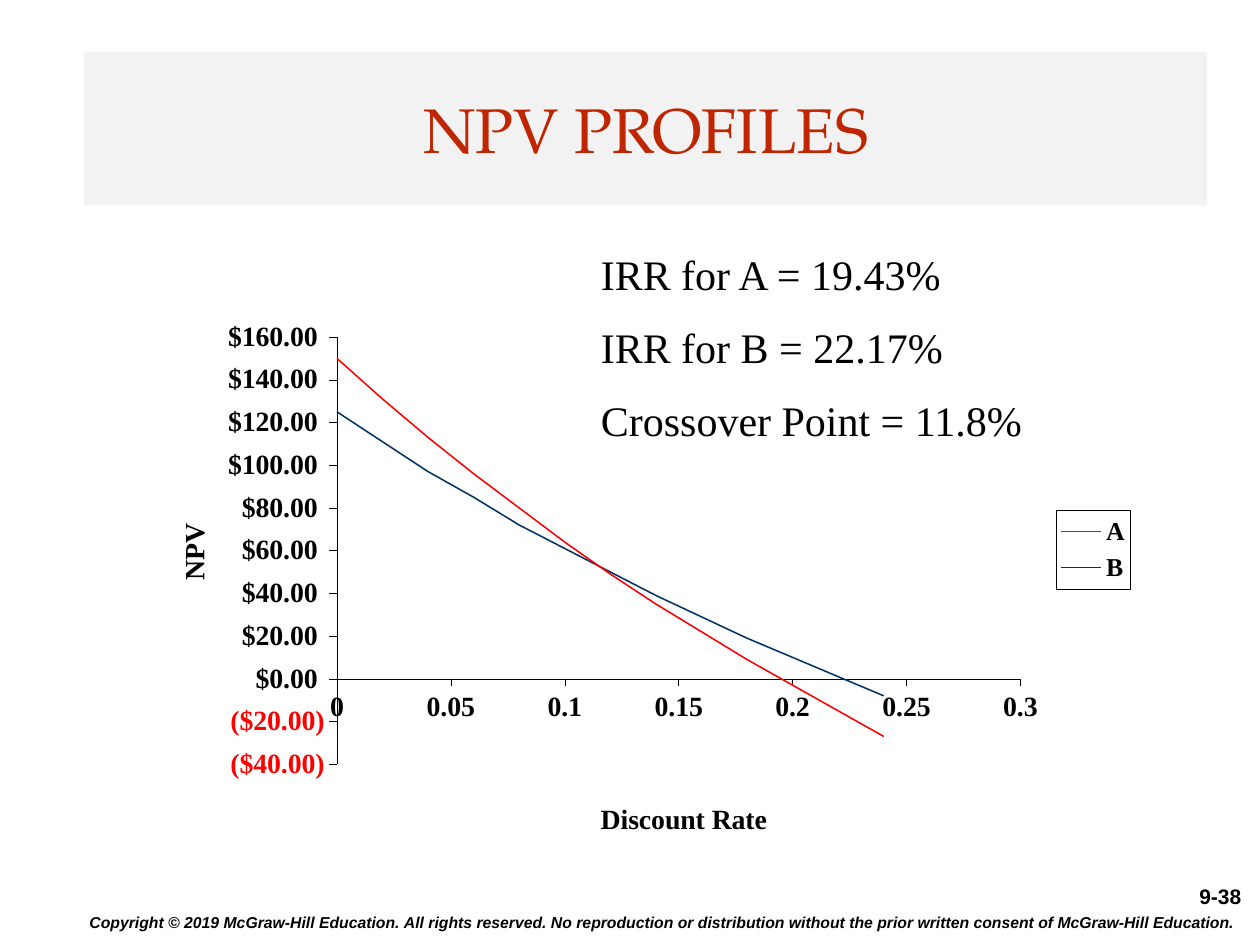
from dataclasses import dataclass

from lxml import etree
from pptx import Presentation
from pptx import util as u
from pptx.chart import data as cd
from pptx.dml.color import RGBColor
from pptx.enum import chart as ch, text
from pptx.oxml import ns


@dataclass(frozen=True)
class Theme:
    """Hold the colours, fonts and type sizes of the slide."""
    black: str = "000000"
    title: str = "BF2600"
    band: str = "F2F2F2"
    line_a: str = "FF0000"
    line_b: str = "003366"
    head: str = "TeX Gyre Pagella"
    body: str = "Times New Roman"
    foot: str = "Arial"
    title_pt: float = 36
    body_pt: float = 24
    axis_pt: float = 15.9
    legend_pt: float = 14.7
    page_pt: float = 12
    copyright_pt: float = 9
    axis_line_pt: float = 0.22
    series_line_pt: float = 0.89


T = Theme()
RATES = [i / 50 for i in range(13)]
PROFILES = {
    "A": (T.line_a, [150, 131, 113, 96, 80, 64, 49, 35, 22, 9, -3, -15, -27]),
    "B": (T.line_b, [125, 111, 97, 85, 72, 61, 50, 39, 29, 19, 10, 1, -8]),
}
FINDINGS = ["IRR for A = 19.43%", "IRR for B = 22.17%", "Crossover Point = 11.8%"]
COPYRIGHT = ("Copyright © 2019 McGraw-Hill Education.\u00a0All rights reserved. "
             "No reproduction or distribution without the prior written consent "
             "of McGraw-Hill Education.")


def apply(obj, **values):
    """Set each given attribute on an object."""
    for name, value in values.items():
        setattr(obj, name, value)


def set_font(font, name, size, color=T.black, bold=False, italic=False):
    """Format a font."""
    apply(font, name=name, size=u.Pt(size), bold=bold, italic=italic)
    font.color.rgb = RGBColor.from_string(color)


def set_line(line, color, width):
    """Format a line."""
    line.color.rgb = RGBColor.from_string(color)
    line.width = u.Pt(width)


def box(*at):
    """Turn left, top, width and height in inches into placement values."""
    return dict(zip(("left", "top", "width", "height"), map(u.Inches, at)))


def fill_text(sp, lines, font, align, anchor=text.MSO_ANCHOR.TOP, gap=0):
    """Write lines as paragraphs with a gap between them."""
    tf = sp.text_frame
    apply(tf, word_wrap=True, vertical_anchor=anchor)
    for i, line in enumerate(lines):
        p = tf.add_paragraph() if i else tf.paragraphs[0]
        apply(p, alignment=align, space_before=u.Pt(gap if i else 0))
        r = p.add_run()
        r.text = line
        set_font(r.font, **font)
    return tf


def add_title(s, title):
    """Place the title on its shaded band."""
    sp = s.shapes.title
    apply(sp, **box(0.67, 0.41, 8.91, 1.22))
    sp.fill.solid()
    sp.fill.fore_color.rgb = RGBColor.from_string(T.band)
    fill_text(sp, [title], dict(name=T.head, size=T.title_pt, color=T.title),
              text.PP_ALIGN.CENTER, text.MSO_ANCHOR.MIDDLE)


def add_text(s, at, lines, font, **layout):
    """Add a text box."""
    return fill_text(s.shapes.add_textbox(**box(*at)), lines, font, **layout)


def place(element, inner=False, **fractions):
    """Give a chart part a manual layout in fractions of the chart."""
    for old in element.findall(ns.qn("c:layout")):
        element.remove(old)
    layout = etree.Element(ns.qn("c:layout"))
    manual = etree.SubElement(layout, ns.qn("c:manualLayout"))
    values = {"layoutTarget": "inner"} if inner else {}
    values.update({f"{k}Mode": "edge" for k in ("x", "y")}, **fractions)
    for name, value in values.items():
        etree.SubElement(manual, ns.qn(f"c:{name}")).set("val", str(value))
    before = [c for c in element
              if c.tag in (ns.qn("c:tx"), ns.qn("c:legendPos"))]
    element.insert(len(before), layout)


def format_axis(axis, title, low, high, step, x, y):
    """Format an axis, its scale and its title."""
    apply(axis, minimum_scale=low, maximum_scale=high, major_unit=step,
          has_major_gridlines=False, major_tick_mark=ch.XL_TICK_MARK.OUTSIDE,
          minor_tick_mark=ch.XL_TICK_MARK.NONE)
    set_line(axis.format.line, T.black, T.axis_line_pt)
    set_font(axis.tick_labels.font, T.body, T.axis_pt, bold=True)
    p = axis.axis_title.text_frame.paragraphs[0]
    r = p.add_run()
    r.text = title
    set_font(r.font, T.body, T.axis_pt, bold=True)
    place(axis.axis_title._element, x=x, y=y)


def add_profiles(s):
    """Add the scatter chart of both NPV profiles."""
    data = cd.XyChartData()
    for name, (_, values) in PROFILES.items():
        series = data.add_series(name)
        for rate, value in zip(RATES, values):
            series.add_data_point(rate, value)
    chart = s.shapes.add_chart(ch.XL_CHART_TYPE.XY_SCATTER_SMOOTH_NO_MARKERS,
                               *box(1.2, 2.39, 7.84, 4.32).values(), data).chart
    apply(chart, has_title=False, has_legend=True)
    set_font(chart.font, T.body, T.axis_pt, bold=True)
    plot = chart.plots[0]
    plot.vary_by_categories = False
    for series, (color, _) in zip(plot.series, PROFILES.values()):
        series.smooth = True
        series.marker.style = ch.XL_MARKER_STYLE.NONE
        set_line(series.format.line, color, T.series_line_pt)
    format_axis(chart.category_axis, "Discount Rate", 0, 0.3, 0.05, 0.45, 0.91)
    format_axis(chart.value_axis, "NPV", -40, 160, 20, 0.02, 0.4)
    apply(chart.category_axis.tick_labels, number_format="General",
          number_format_is_linked=False)
    apply(chart.value_axis.tick_labels, number_format_is_linked=False,
          number_format='"$"#,##0.00_);[Red]\\("$"#,##0.00\\)')
    place(plot._element.getparent(), inner=True, x=0.188, y=0.066, w=0.692, h=0.785)
    legend = chart.legend
    apply(legend, position=ch.XL_LEGEND_POSITION.RIGHT, include_in_layout=False)
    set_font(legend.font, T.body, T.legend_pt, bold=True)
    place(legend._element, x=0.916, y=0.384, w=0.095 - 0.02, h=0.145)
    border = etree.Element(ns.qn("c:spPr"))
    line = etree.SubElement(border, ns.qn("a:ln"), w=str(u.Pt(T.axis_line_pt)))
    fill = etree.SubElement(line, ns.qn("a:solidFill"))
    etree.SubElement(fill, ns.qn("a:srgbClr"), val=T.black)
    legend._element.find(ns.qn("c:txPr")).addprevious(border)


def main():
    """Build and save the slide."""
    prs = Presentation()
    apply(prs, slide_width=u.Inches(10), slide_height=u.Inches(7.5))
    s = prs.slides.add_slide(prs.slide_layouts[5])
    add_profiles(s)
    add_title(s, "NPV PROFILES")
    add_text(s, (4.67, 1.92, 3.75, 1.72), FINDINGS,
             dict(name=T.body, size=T.body_pt), align=text.PP_ALIGN.LEFT, gap=13)
    add_text(s, (8.91, 6.96, 1.04, 0.26), ["9-38"],
             dict(name=T.foot, size=T.page_pt, bold=True), align=text.PP_ALIGN.RIGHT)
    tf = add_text(s, (0.5, 7.14, 9.5, 0.36), [COPYRIGHT],
                  dict(name=T.foot, size=T.copyright_pt, bold=True, italic=True),
                  align=text.PP_ALIGN.CENTER, anchor=text.MSO_ANCHOR.MIDDLE)
    apply(tf, margin_left=u.Inches(0.09), margin_right=u.Inches(0.09),
          margin_top=u.Inches(0.04), margin_bottom=u.Inches(0.04))
    prs.save("out.pptx")


if __name__ == "__main__":
    main()
